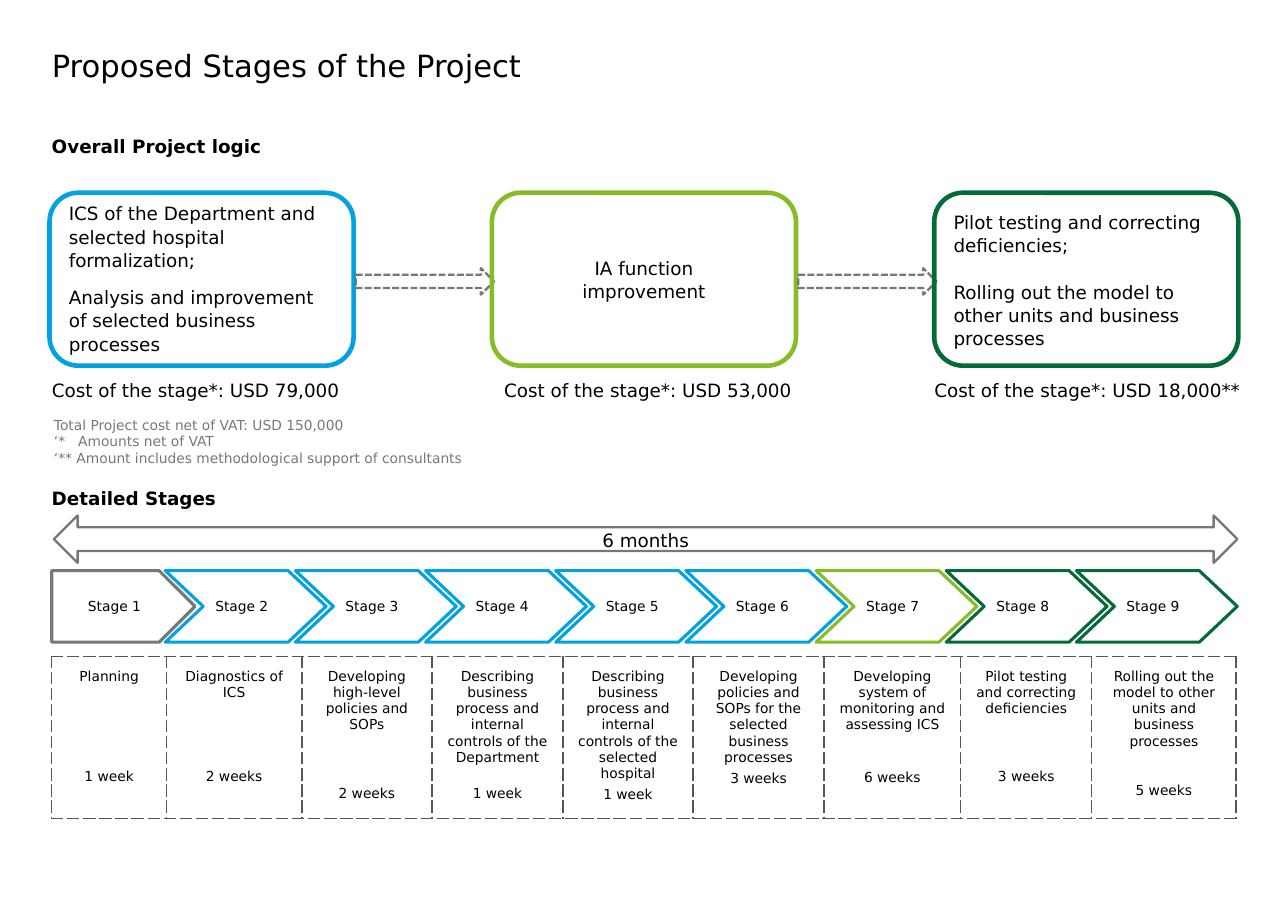
import pptx
import pptx.util
import pptx.dml.color
import pptx.enum.dml
import pptx.enum.shapes
import pptx.enum.text
import pptx.oxml
import pptx.oxml.ns

Inches, Pt = pptx.util.Inches, pptx.util.Pt
RGBColor = pptx.dml.color.RGBColor
MSO = pptx.enum.shapes.MSO_SHAPE
DASH = pptx.enum.dml.MSO_LINE
ANCHOR = pptx.enum.text.MSO_ANCHOR
ALIGN = pptx.enum.text.PP_ALIGN

FONT = "DejaVu Sans"
BLACK = RGBColor(0x00, 0x00, 0x00)
WHITE = RGBColor(0xFF, 0xFF, 0xFF)
GRAY = RGBColor(0x75, 0x78, 0x7B)
BORDER = RGBColor(0x53, 0x56, 0x5A)
BLUE = RGBColor(0x00, 0xA3, 0xE0)
LIME = RGBColor(0x86, 0xBC, 0x25)
GREEN = RGBColor(0x04, 0x6A, 0x38)

PHASES = [
    (BLUE, ["ICS of the Department and selected hospital formalization;",
            "Analysis and improvement of selected business processes"],
     9, ALIGN.LEFT, ANCHOR.TOP, 0, "Cost of the stage*: USD 79,000", 0.02),
    (LIME, ["IA function", "improvement"],
     0, ALIGN.CENTER, ANCHOR.MIDDLE, 0.1, "Cost of the stage*: USD 53,000", 0.11),
    (GREEN, ["Pilot testing and correcting deficiencies;",
             "Rolling out the model to other units and business processes"],
     15, ALIGN.LEFT, ANCHOR.TOP, 0.08, "Cost of the stage*: USD 18,000**", 0),
]
NOTES = [
    "Total Project cost net of VAT: USD 150,000",
    "‘*\tAmounts net of VAT",
    "‘** Amount includes methodological support of consultants",
]
STAGES = [
    (GRAY, 1.04, "Planning", "1 week", 54.5),
    (BLUE, 1.23, "Diagnostics of ICS", "2 weeks", 44),
    (BLUE, 1.18, "Developing high-level policies and SOPs", "2 weeks", 34),
    (BLUE, 1.19, "Describing business process and internal controls of the Department",
     "1 week", 13),
    (BLUE, 1.18, "Describing business process and internal controls of the selected hospital",
     "1 week", 3),
    (BLUE, 1.19, "Developing policies and SOPs for the selected business processes",
     "3 weeks", 3),
    (LIME, 1.24, "Developing system of monitoring and assessing ICS", "6 weeks", 23.5),
    (GREEN, 1.19, "Pilot testing and correcting deficiencies", "3 weeks", 33.5),
    (GREEN, 1.31, "Rolling out the model to other units and business processes",
     "5 weeks", 22),
]


def write(tf, texts, size, align=ALIGN.LEFT, gap=0, spacing=None, color=BLACK, bold=False):
    for i, text in enumerate(texts):
        p = tf.paragraphs[0] if i == 0 else tf.add_paragraph()
        p.text = text
        p.alignment = align
        p.line_spacing = spacing
        p.space_before = Pt(gap if i else 0)
        if "\t" in text:
            p._p.get_or_add_pPr().append(pptx.oxml.parse_xml(
                f'<a:tabLst {pptx.oxml.ns.nsdecls("a")}>'
                f'<a:tab pos="{Inches(0.22)}" algn="l"/></a:tabLst>'))
        p.font.name = FONT
        p.font.size = Pt(size)
        p.font.bold = bold
        p.font.color.rgb = color


def frame(tf, side=0, top=0, bottom=0, anchor=ANCHOR.TOP):
    tf.word_wrap = True
    tf.auto_size = pptx.enum.text.MSO_AUTO_SIZE.NONE
    tf.vertical_anchor = anchor
    tf.margin_left = tf.margin_right = Inches(side)
    tf.margin_top, tf.margin_bottom = Inches(top), Inches(bottom)
    return tf


def add_text(s, box, texts, size, **look):
    tb = s.shapes.add_textbox(*map(Inches, box))
    write(frame(tb.text_frame), texts, size, **look)


def add_outline(s, kind, box, color, width, fill=None, dash=None):
    sp = s.shapes.add_shape(kind, *map(Inches, box))
    sp.shadow.inherit = False
    if fill is None:
        sp.fill.background()
    else:
        sp.fill.solid()
        sp.fill.fore_color.rgb = fill
    sp.line.color.rgb = color
    sp.line.width = Pt(width)
    if dash:
        sp.line.dash_style = dash
    return sp


def add_title(s, box):
    title = s.shapes.title
    title.left, title.top, title.width, title.height = map(Inches, box)
    write(frame(title.text_frame, anchor=ANCHOR.MIDDLE),
          ["Proposed Stages of the Project"], 20)


def add_project_logic(s, box):
    x, y, w, h = box
    card_w, arrow_h = 2.76, 0.24
    pitch = (w - card_w) / (len(PHASES) - 1)
    for i, (color, texts, gap, align, anchor, top, cost, shift) in enumerate(PHASES):
        left = x + i * pitch
        sp = add_outline(s, MSO.ROUNDED_RECTANGLE, (left, y, card_w, h), color, 3)
        tf = frame(sp.text_frame, 0.1, top, top if anchor == ANCHOR.MIDDLE else 0, anchor)
        write(tf, texts, 12, align=align, gap=gap, spacing=1.06)
        add_text(s, (left + shift, y + h + 0.12, 2.99, 0.2), [cost], 12)
        if i < len(PHASES) - 1:
            arrow = (left + card_w + 0.02, y + (h - arrow_h) / 2 + 0.02,
                     pitch - card_w, arrow_h)
            add_outline(s, MSO.RIGHT_ARROW, arrow, GRAY, 1.5, dash=DASH.SQUARE_DOT)


def add_duration(s, box):
    sp = add_outline(s, MSO.LEFT_RIGHT_ARROW, box, GRAY, 1.5)
    write(frame(sp.text_frame, 0.1, anchor=ANCHOR.MIDDLE), ["6 months"], 12,
          align=ALIGN.CENTER, spacing=1.06)


def add_stage_row(s, box):
    x, y, w, h = box
    plate_w, chevron_w, start = 1.3, 1.46, 1.03
    pitch = (w - start - chevron_w) / (len(STAGES) - 2)
    for i, stage in enumerate(STAGES):
        if i == 0:
            kind, place, align = MSO.PENTAGON, (x, y, plate_w, h), ALIGN.CENTER
        else:
            kind, align = MSO.CHEVRON, ALIGN.LEFT
            place = (x + start + (i - 1) * pitch, y, chevron_w, h)
        sp = add_outline(s, kind, place, stage[0], 2, WHITE)
        if i:
            sp.adjustments[0] = 0.53
        write(frame(sp.text_frame, 0.11, 0.11, 0.11, ANCHOR.MIDDLE),
              [f"Stage {i + 1}"], 9, align=align)


def add_borders(cell):
    tcPr = cell._tc.get_or_add_tcPr()
    for i, side in enumerate(("lnL", "lnR", "lnT", "lnB")):
        tcPr.insert(i, pptx.oxml.parse_xml(
            f'<a:{side} {pptx.oxml.ns.nsdecls("a")} w="{Pt(1)}"><a:solidFill>'
            f'<a:srgbClr val="{BORDER}"/></a:solidFill><a:prstDash val="dash"/></a:{side}>'))


def add_stage_table(s, box):
    table = s.shapes.add_table(1, len(STAGES), *map(Inches, box)).table
    table.first_row = table.horz_banding = False
    for i, (_, width, task, duration, gap) in enumerate(STAGES):
        table.columns[i].width = Inches(width)
        cell = table.cell(0, i)
        cell.fill.background()
        add_borders(cell)
        cell.margin_left = cell.margin_right = Inches(0.11)
        cell.margin_top = cell.margin_bottom = Inches(0.11)
        write(cell.text_frame, [task, duration], 9, align=ALIGN.CENTER, gap=gap)


def main():
    prs = pptx.Presentation()
    prs.slide_width, prs.slide_height = Inches(11.69), Inches(8.27)
    s = prs.slides.add_slide(prs.slide_layouts[5])
    left, width = 0.47, 10.74
    add_title(s, (left, 0.39, width, 0.4))
    add_text(s, (left, 1.23, width / 2, 0.2), ["Overall Project logic"], 12, bold=True)
    add_project_logic(s, (0.45, 1.75, 10.79, 1.57))
    add_text(s, (0.49, 3.78, 7.67, 0.61), NOTES, 9, color=GRAY)
    add_text(s, (left, 4.42, width / 2, 0.2), ["Detailed Stages"], 12, bold=True)
    add_duration(s, (0.49, 4.68, width, 0.43))
    add_stage_row(s, (left, 5.18, 10.76, 0.65))
    add_stage_table(s, (left, 5.96, width, 1.47))
    prs.save("out.pptx")


if __name__ == "__main__":
    main()
